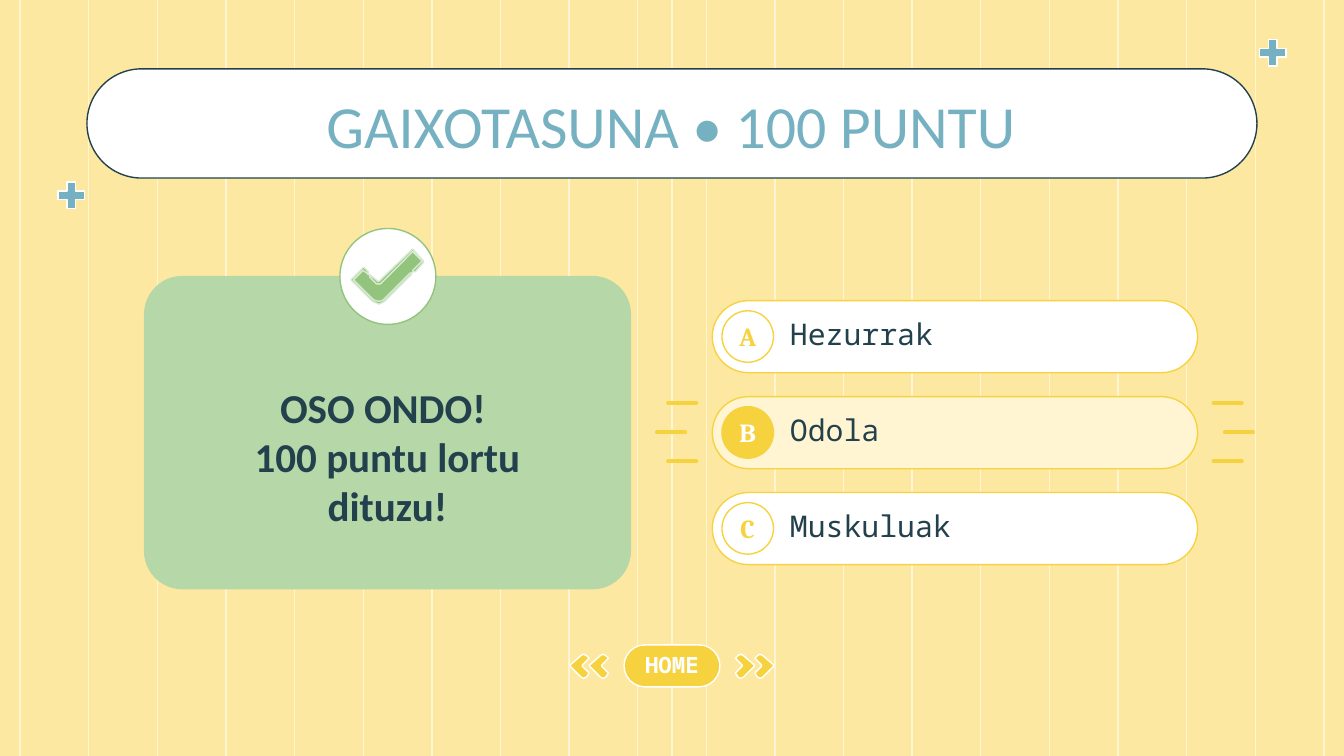
from lxml import etree
from pptx import Presentation
from pptx import util as u
from pptx.dml import color
from pptx.enum import shapes, text
from pptx.oxml import ns

YELLOW, CREAM, WHITE = "F7D23F", "FFF5D2", "FFFFFF"
NAVY, TEAL = "23414C", "76B1C1"
GREEN, LEAF, MINT = "B6D7A8", "93C47D", "D9EAD3"
WIDTH, HEIGHT = 720, 405
UNIT = 0.72  # grid of the hand-drawn outlines, in points


def rgb(code):
    return color.RGBColor.from_string(code)


class QuizSlide:
    """Holds the style and the slide that is being filled."""

    body = {"name": "Noto Sans Mono", "size": u.Pt(16), "bold": False}
    letter = {"name": "Cambria", "size": u.Pt(14), "bold": True}
    title = {"name": "Calibri", "size": u.Pt(32), "bold": False}
    praise = {"name": "Calibri", "size": u.Pt(22), "bold": True}
    button = {"name": "Noto Sans Mono", "size": u.Pt(12), "bold": True}

    def __init__(self, deck, background):
        self.slide = deck.slides.add_slide(deck.slide_layouts[6])
        self.shapes = self.slide.shapes
        fill = self.slide.background.fill
        fill.solid()
        fill.fore_color.rgb = rgb(background)

    def paint(self, shape, fill, line):
        shape.shadow.inherit = False
        shape.fill.solid()
        shape.fill.fore_color.rgb = rgb(fill)
        shape.line.color.rgb = rgb(line)
        shape.line.width = u.Pt(0.75)

    def shape(self, kind, box, fill, line, adjust=None):
        shape = self.shapes.add_shape(kind, *map(u.Pt, box))
        if adjust is not None:
            shape.adjustments[0] = adjust
        self.paint(shape, fill, line)
        return shape

    def rounded(self, box, fill, line, adjust=0.5):
        return self.shape(shapes.MSO_SHAPE.ROUNDED_RECTANGLE, box, fill, line, adjust)

    def circle(self, left, top, size, fill, line):
        return self.shape(shapes.MSO_SHAPE.OVAL, (left, top, size, size), fill, line)

    def line(self, x1, y1, x2, y2, stroke, width, cap="flat"):
        rule = self.shapes.add_connector(
            shapes.MSO_CONNECTOR.STRAIGHT, *map(u.Pt, (x1, y1, x2, y2)))
        rule.line.color.rgb = rgb(stroke)
        rule.line.width = u.Pt(width)
        properties = rule.element.spPr
        properties.find(ns.qn("a:ln")).set("cap", cap)
        etree.SubElement(properties, ns.qn("a:effectLst"))

    def outline(self, points, left, top, fill, line):
        builder = self.shapes.build_freeform(*points[0], scale=u.Pt(UNIT))
        builder.add_line_segments(points[1:], close=True)
        self.paint(builder.convert_to_shape(u.Pt(left), u.Pt(top)), fill, line)

    def put_text(self, shape, lines, style, ink, insets,
                 align=text.PP_ALIGN.CENTER, anchor=text.MSO_ANCHOR.MIDDLE):
        frame = shape.text_frame
        sides = ("margin_left", "margin_top", "margin_right", "margin_bottom")
        layout = dict(zip(sides, map(u.Pt, insets)), word_wrap=True,
                      vertical_anchor=anchor)
        for key, value in layout.items():
            setattr(frame, key, value)
        for i, words in enumerate(lines):
            paragraph = frame.add_paragraph() if i else frame.paragraphs[0]
            paragraph.alignment = align
            run = paragraph.add_run()
            run.text = words
            for key, value in style.items():
                setattr(run.font, key, value)
            run.font.color.rgb = rgb(ink)

    def label(self, box, *args, **kwargs):
        self.put_text(self.shapes.add_textbox(*map(u.Pt, box)), *args, **kwargs)


def main():
    deck = Presentation()
    deck.slide_width, deck.slide_height = u.Pt(WIDTH), u.Pt(HEIGHT)
    quiz = QuizSlide(deck, "FDE8A1")

    # Striped background: an even row and the centre line
    for x in [WIDTH / 2] + [10.8 + 36.76 * i for i in range(20)]:
        quiz.line(x, 0, x, HEIGHT, CREAM, 0.75)

    # Title banner with two plus signs
    quiz.rounded((46.6, 36.9, 626.8, 58.5), WHITE, NAVY)
    for left, top in ((28.5, 94.9), (672.2, 18.6)):
        quiz.shape(shapes.MSO_SHAPE.MATH_PLUS, (left, top, 19.3, 19.3),
                   TEAL, WHITE, 0.235)
    quiz.label((94.3, 40.3, 530.6, 46.8), ["GAIXOTASUNA • 100 PUNTU"],
               quiz.title, TEAL, [7.2] * 4, anchor=text.MSO_ANCHOR.TOP)

    # Answers, the right one highlighted
    answers = (("A", "Hezurrak"), ("B", "Odola"), ("C", "Muskuluak"))
    for i, (letter, answer) in enumerate(answers):
        right = letter == "B"
        top = 161.1 + 51.4 * i
        pill = quiz.rounded((381.6, top, 260, 38.6), CREAM if right else WHITE, YELLOW)
        quiz.put_text(pill, [answer], quiz.body, NAVY, (36, 3.6, 7.2, 7.2),
                      align=text.PP_ALIGN.LEFT)
        badge = quiz.circle(386.8, top + 5.4, 27.6, YELLOW if right else WHITE, YELLOW)
        quiz.put_text(badge, [letter], quiz.letter, WHITE if right else YELLOW,
                      (0, 7.2, 0, 7.2))

    # Dashes on both sides of the right answer
    answer_axis = 511.6
    for inset, y in ((153.6, 216), (159.6, 231.6), (153.6, 247.2)):
        for side in (-1, 1):
            quiz.line(answer_axis + side * inset, y,
                      answer_axis + side * (inset - 15), y, YELLOW, 2.25, "rnd")

    # Praise card
    card = quiz.rounded((77.5, 148.2, 260.2, 167.2), GREEN, GREEN, 0.121)
    quiz.put_text(card, ["OSO ONDO! ", "100 puntu lortu dituzu!"], quiz.praise, NAVY,
                  (21.6, 32.4, 21.6, 7.2))

    # Tick: body, lower rim, upper rim
    quiz.circle(182.1, 122.4, 51.4, WHITE, LEAF)
    body = [(46, 1), (22, 25), (21, 26), (20, 25), (9, 15), (1, 23), (17, 38),
            (21, 40), (25, 38), (54, 9)]
    lower_rim = [(9, 14), (1, 22), (0, 23), (1, 24), (16, 39), (21, 41), (25, 39),
                 (45, 19), (45, 18), (44, 18), (24, 38), (21, 39), (17, 38),
                 (2, 23), (9, 16), (12, 18), (13, 19), (13, 17), (10, 14)]
    upper_rim = [(46, 0), (45, 1), (21, 24), (20, 24), (15, 20), (14, 19), (14, 21),
                 (19, 26), (21, 26), (22, 26), (46, 2), (53, 9), (46, 16),
                 (47, 17), (48, 17), (54, 10), (54, 9)]
    for part in (body, lower_rim, upper_rim):
        quiz.outline(part, 188, 133.4, LEAF, MINT)

    # Home button and mirrored pairs of chevrons
    home = quiz.rounded((334.3, 345.5, 51.4, 22.5), YELLOW, WHITE)
    quiz.put_text(home, ["HOME"], quiz.button, WHITE, (7.2, 5.8, 7.2, 7.2))
    upper_half = [(13.8, 8.2), (6, 0.8), (4, 0), (1.5, 0.8), (0.5, 3), (2, 5),
                  (5.2, 8.2)]
    chevron = upper_half + [(x, 17.5 - y) for x, y in reversed(upper_half)]
    for side in (1, -1):
        for offset in (34, 44.4):
            quiz.outline([(side * x, y) for x, y in chevron],
                         WIDTH / 2 + side * offset, 350.5, YELLOW, WHITE)

    deck.save("out.pptx")


if __name__ == "__main__":
    main()
